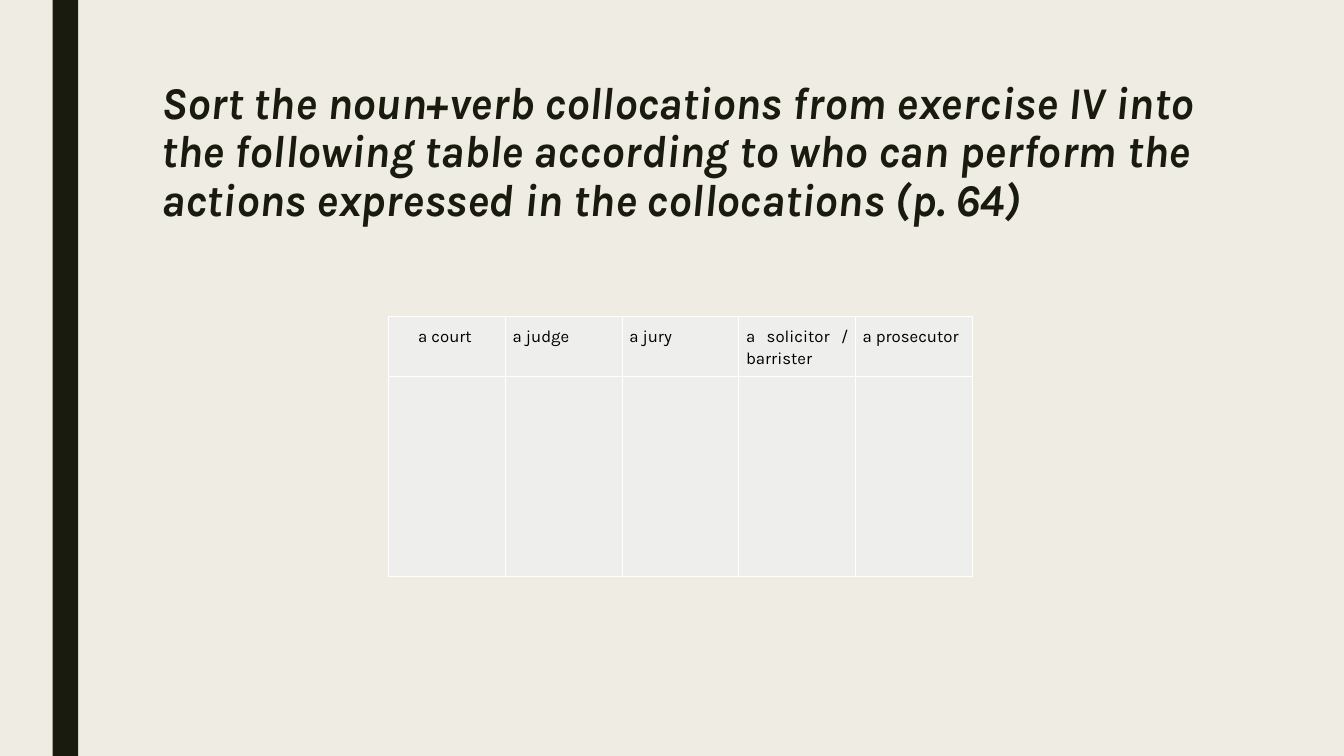
from lxml.etree import SubElement
from pptx import Presentation
from pptx.dml.color import RGBColor
from pptx.enum.shapes import MSO_SHAPE
from pptx.enum.text import MSO_ANCHOR, MSO_AUTO_SIZE, PP_ALIGN
from pptx.oxml.ns import qn
from pptx.util import Cm, Pt

FONT = "Karla"
CREAM = RGBColor(0xEF, 0xED, 0xE3)
DARK = RGBColor(0x19, 0x1B, 0x0E)
CELL_GREY = RGBColor(0xEE, 0xEE, 0xED)
WHITE = RGBColor(0xFF, 0xFF, 0xFF)
BLACK = RGBColor(0x00, 0x00, 0x00)

TITLE = ("Sort the noun+verb collocations from exercise IV into the following "
         "table according to who can perform the actions expressed in the "
         "collocations (p. 64)")
ACTORS = ["a court", "a judge", "a jury", "a solicitor / barrister", "a prosecutor"]
COLUMN_WIDTH = Cm(2.94)
ROW_HEIGHTS = [Cm(1.48), Cm(5.04)]
CELL_MARGIN = Cm(0.18)


def format_text(para, size, color, spacing, emphasis=False):
    para.line_spacing = spacing
    for span in para.runs:
        span.font.name = FONT
        span.font.size = Pt(size)
        span.font.color.rgb = color
        span.font.bold = span.font.italic = emphasis


def add_side_bar(page, height):
    bar = page.shapes.add_shape(MSO_SHAPE.RECTANGLE, Cm(1.33), 0, Cm(0.64), height)
    bar.shadow.inherit = False
    bar.fill.solid()
    bar.fill.fore_color.rgb = DARK
    bar.line.fill.background()


def set_title(page):
    box = page.shapes.title
    box.left, box.top, box.width, box.height = Cm(3.81), Cm(1.9), Cm(26.67), Cm(4.12)
    frame = box.text_frame
    frame.text = TITLE
    frame.word_wrap = True
    frame.auto_size = MSO_AUTO_SIZE.NONE
    frame.vertical_anchor = MSO_ANCHOR.TOP
    para = frame.paragraphs[0]
    para.alignment = PP_ALIGN.LEFT
    format_text(para, 32.4, DARK, 0.89, emphasis=True)


def style_cell(cell):
    # Borders come before the fill in the cell properties
    properties = cell._tc.get_or_add_tcPr()
    for side in ("lnL", "lnR", "lnT", "lnB"):
        line = SubElement(properties, qn(f"a:{side}"), w=str(Pt(1)))
        fill = SubElement(line, qn("a:solidFill"))
        SubElement(fill, qn("a:srgbClr"), val=str(WHITE))
    cell.fill.solid()
    cell.fill.fore_color.rgb = CELL_GREY
    cell.margin_left = cell.margin_right = CELL_MARGIN
    cell.margin_top = cell.margin_bottom = CELL_MARGIN


def add_actor_table(page):
    table = page.shapes.add_table(
        len(ROW_HEIGHTS), len(ACTORS), Cm(9.8), Cm(7.98),
        COLUMN_WIDTH * len(ACTORS), sum(ROW_HEIGHTS)).table
    table.first_row = table.horz_banding = False
    for column in table.columns:
        column.width = COLUMN_WIDTH
    for row, height in zip(table.rows, ROW_HEIGHTS):
        row.height = height
    for cell in table.iter_cells():
        style_cell(cell)

    # Header row
    for cell, actor in zip(table.rows[0].cells, ACTORS):
        cell.text_frame.text = actor
        para = cell.text_frame.paragraphs[0]
        para.alignment = PP_ALIGN.JUSTIFY
        format_text(para, 12, BLACK, 1.15)

    # The first heading is indented
    indented = table.cell(0, 0).text_frame.paragraphs[0]._p.get_or_add_pPr()
    indented.set("marL", str(Cm(1.27)))
    indented.set("indent", str(-Cm(0.71)))


def main():
    deck = Presentation()
    deck.slide_width, deck.slide_height = Cm(33.87), Cm(19.05)
    page = deck.slides.add_slide(deck.slide_layouts[5])
    page.background.fill.solid()
    page.background.fill.fore_color.rgb = CREAM

    add_side_bar(page, deck.slide_height)
    set_title(page)
    add_actor_table(page)
    deck.save("out.pptx")


if __name__ == "__main__":
    main()
